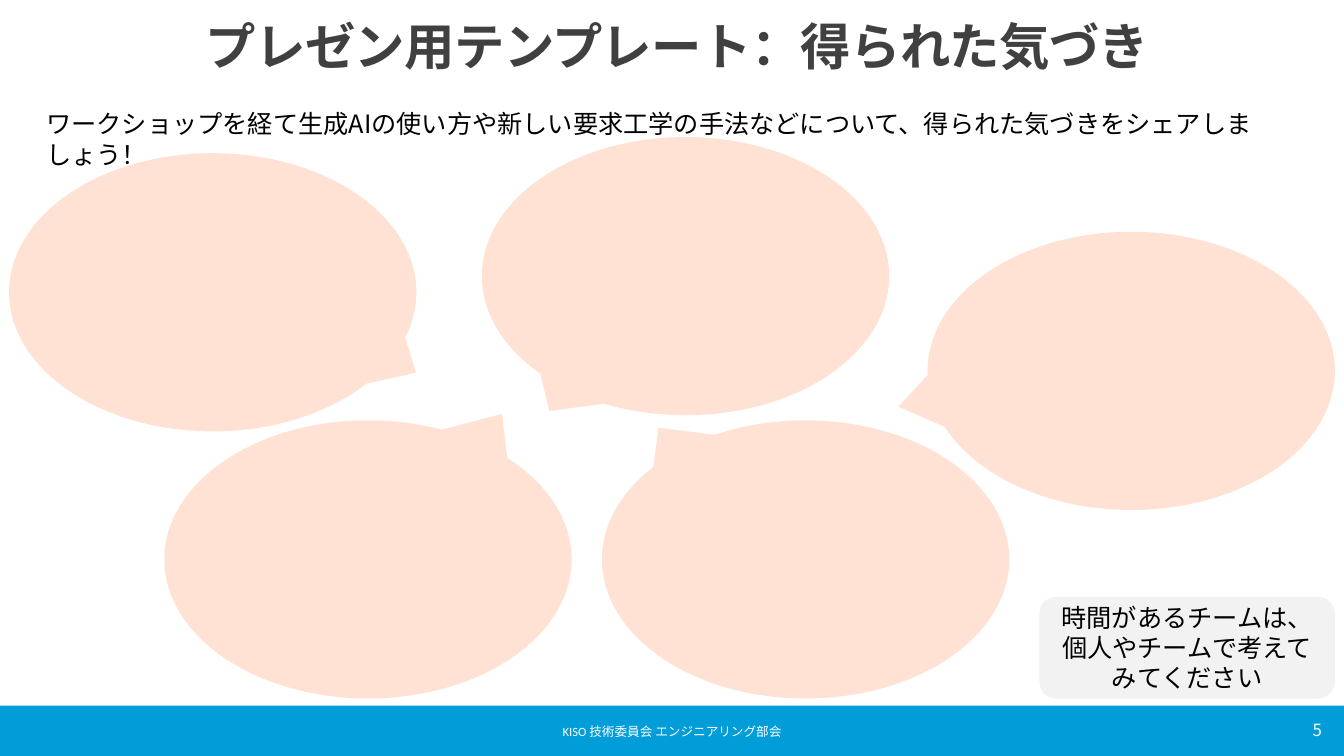
from lxml import etree
from pptx import Presentation
from pptx import util as u
from pptx.dml import color
from pptx.enum import shapes, text
from pptx.oxml import ns

SCALE = 9144
NOTO = "Noto Sans CJK JP"
KIND = shapes.MSO_SHAPE
ALIGN = text.PP_ALIGN
ANCHOR = text.MSO_ANCHOR


def px(n):
    return u.Emu(n * SCALE)


def rgb(code):
    return color.RGBColor.from_string(code)


def place(item, box):
    item.left, item.top, item.width, item.height = map(px, box)


def write(item, words, size, hue, align, font=NOTO, bold=False):
    frame = item.text_frame
    frame.word_wrap = True
    frame.text = words
    for para in frame.paragraphs:
        para.alignment = align
        for run in para.runs:
            run.font.size = u.Pt(size)
            run.font.bold = bold
            run.font.name = font
            run.font.color.rgb = rgb(hue)
            east = etree.SubElement(run.font._element, ns.qn("a:ea"))
            east.set("typeface", NOTO)
    return frame


def shape(slide, kind, box, fill):
    item = slide.shapes.add_shape(kind, *map(px, box))
    item.shadow.inherit = False
    item.fill.solid()
    item.fill.fore_color.rgb = rgb(fill)
    item.line.fill.background()
    return item


def label(slide, box, words, size, hue, align, anchor, font=NOTO):
    item = slide.shapes.add_textbox(*map(px, box))
    write(item, words, size, hue, align, font).vertical_anchor = anchor


def footer(slide, box):
    left, top, width, height = box
    shape(slide, KIND.RECTANGLE, box, "009DD9")
    label(slide, (left + width - 155, top + 4, 143, 40), "5",
          12, "FFFFFF", ALIGN.RIGHT, ANCHOR.MIDDLE)
    label(slide, (left + (width - 527) // 2, top + 6, 527, 40),
          "KISO 技術委員会 エンジニアリング部会",
          9, "FFFFFF", ALIGN.CENTER, ANCHOR.MIDDLE, "Calibri")


def header(slide, box):
    left, top, width, height = box
    title = slide.shapes.title
    place(title, (left + 34, top, 1204, 87))
    frame = write(title, "プレゼン用テンプレート：得られた気づき",
                  36, "404040", ALIGN.CENTER, bold=True)
    frame.vertical_anchor = ANCHOR.MIDDLE
    para = frame.paragraphs[0]
    para.line_spacing = 0.85
    para.runs[0].font._element.set("spc", "-50")
    label(slide, (left, top + 97, width, 40),
          "ワークショップを経て生成AIの使い方や新しい要求工学の手法などについて、"
          "得られた気づきをシェアしましょう！",
          18, "000000", ALIGN.LEFT, ANCHOR.TOP)


def bubbles(slide, box):
    left, top, width, height = box
    spots = [
        (0, 16, 0.499, 0.289),
        (154, 281, 0.329, -0.523),
        (588, 281, -0.361, -0.473),
        (911, 94, -0.572, 0.129),
        (469, 0, -0.334, 0.485),
    ]
    for across, down, tip_x, tip_y in spots:
        item = shape(slide, KIND.OVAL_CALLOUT,
                     (left + across, top + down, 404, 276), "FFE2D4")
        item.adjustments[0] = tip_x
        item.adjustments[1] = tip_y


def hint(slide, box):
    item = shape(slide, KIND.FLOWCHART_ALTERNATE_PROCESS, box, "F2F2F2")
    frame = write(item, "時間があるチームは、\n個人やチームで考えてみてください",
                  18, "000000", ALIGN.CENTER)
    frame.vertical_anchor = ANCHOR.MIDDLE
    frame.margin_left = frame.margin_right = px(8)
    frame.margin_top = frame.margin_bottom = 0


def main():
    deck = Presentation()
    deck.slide_width, deck.slide_height = px(1333), px(750)
    slide = deck.slides.add_slide(deck.slide_layouts[5])
    footer(slide, (0, 700, 1333, 50))
    bubbles(slide, (9, 136, 1315, 557))
    header(slide, (36, 6, 1262, 137))
    hint(slide, (1031, 592, 293, 101))
    deck.save("out.pptx")


if __name__ == "__main__":
    main()
